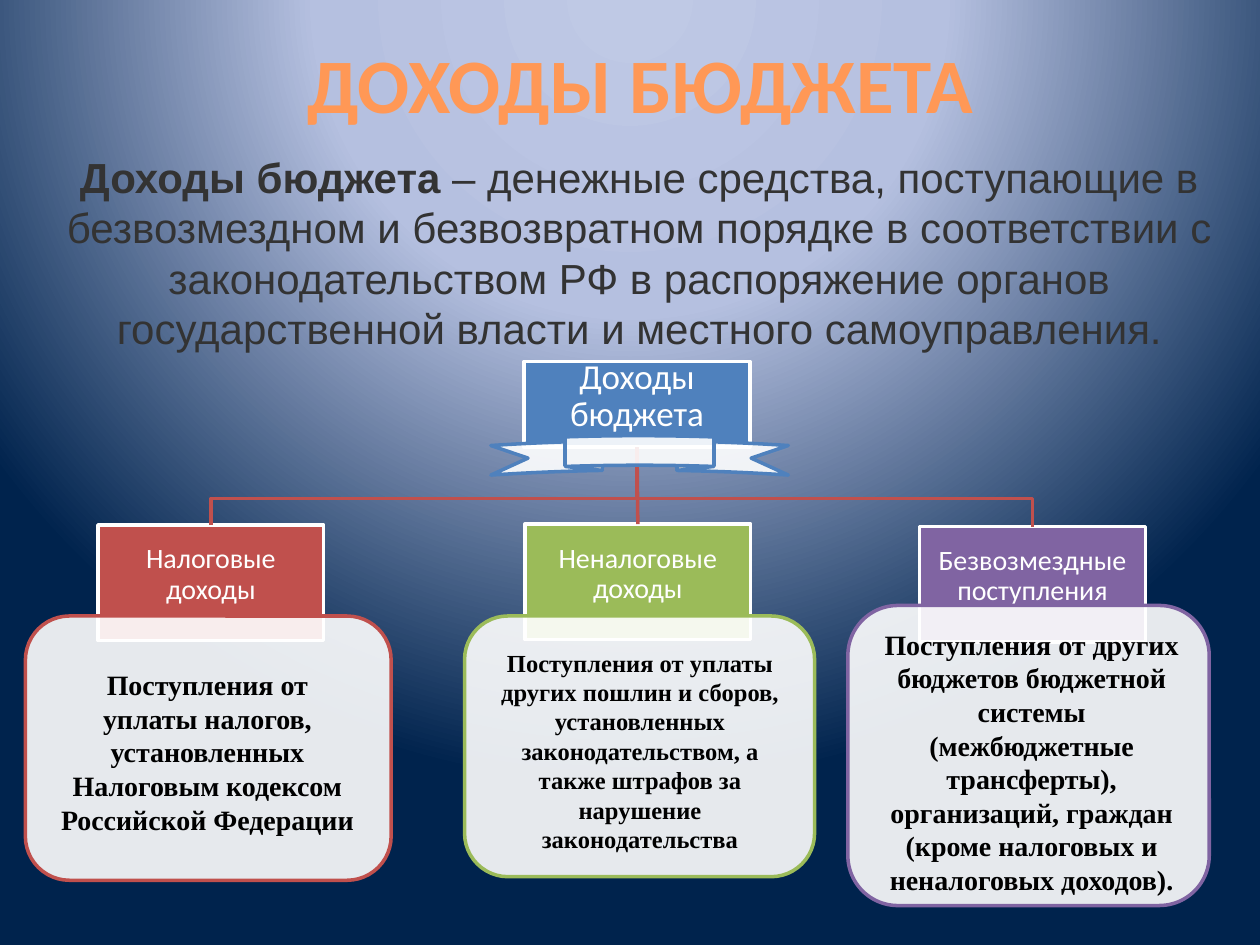
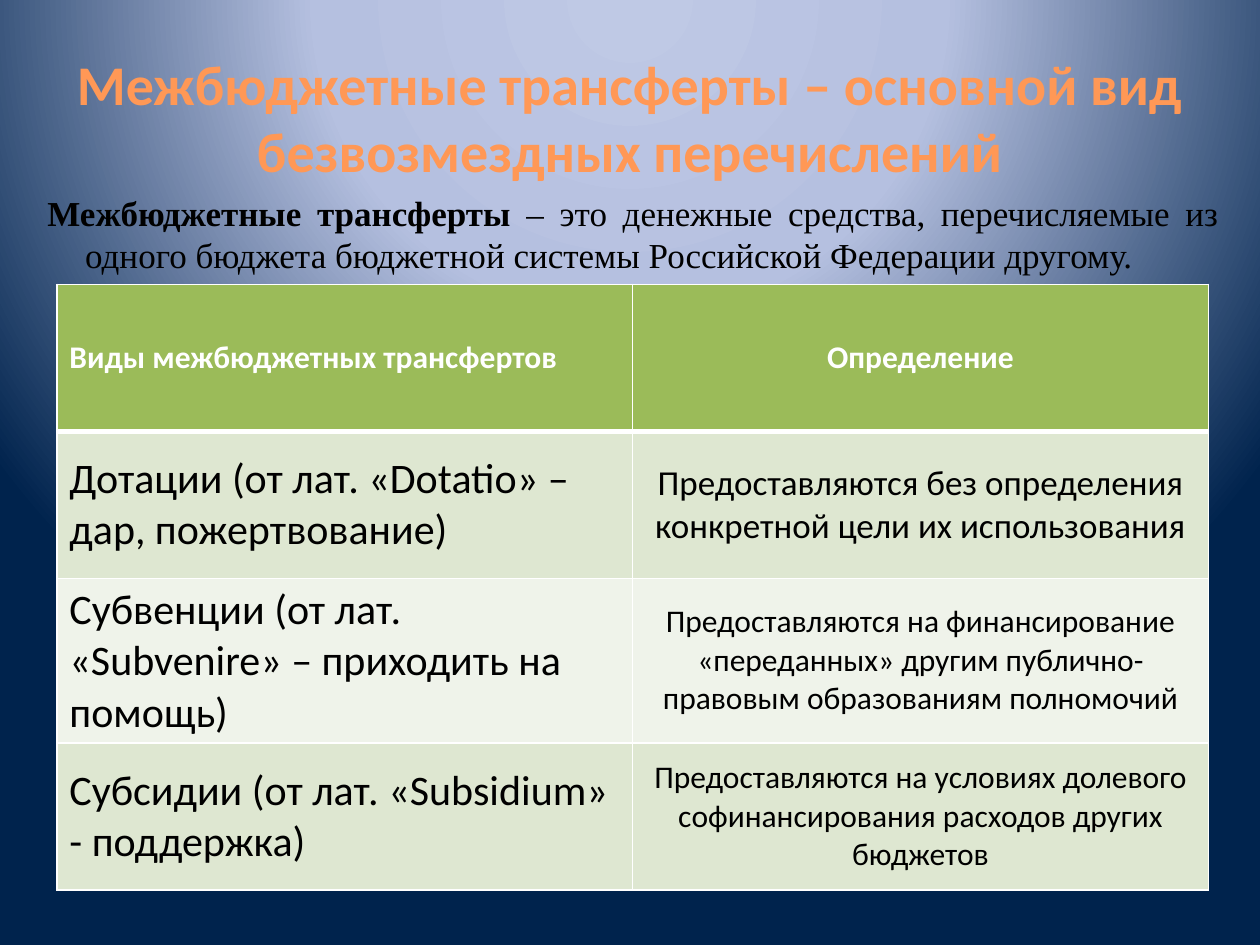
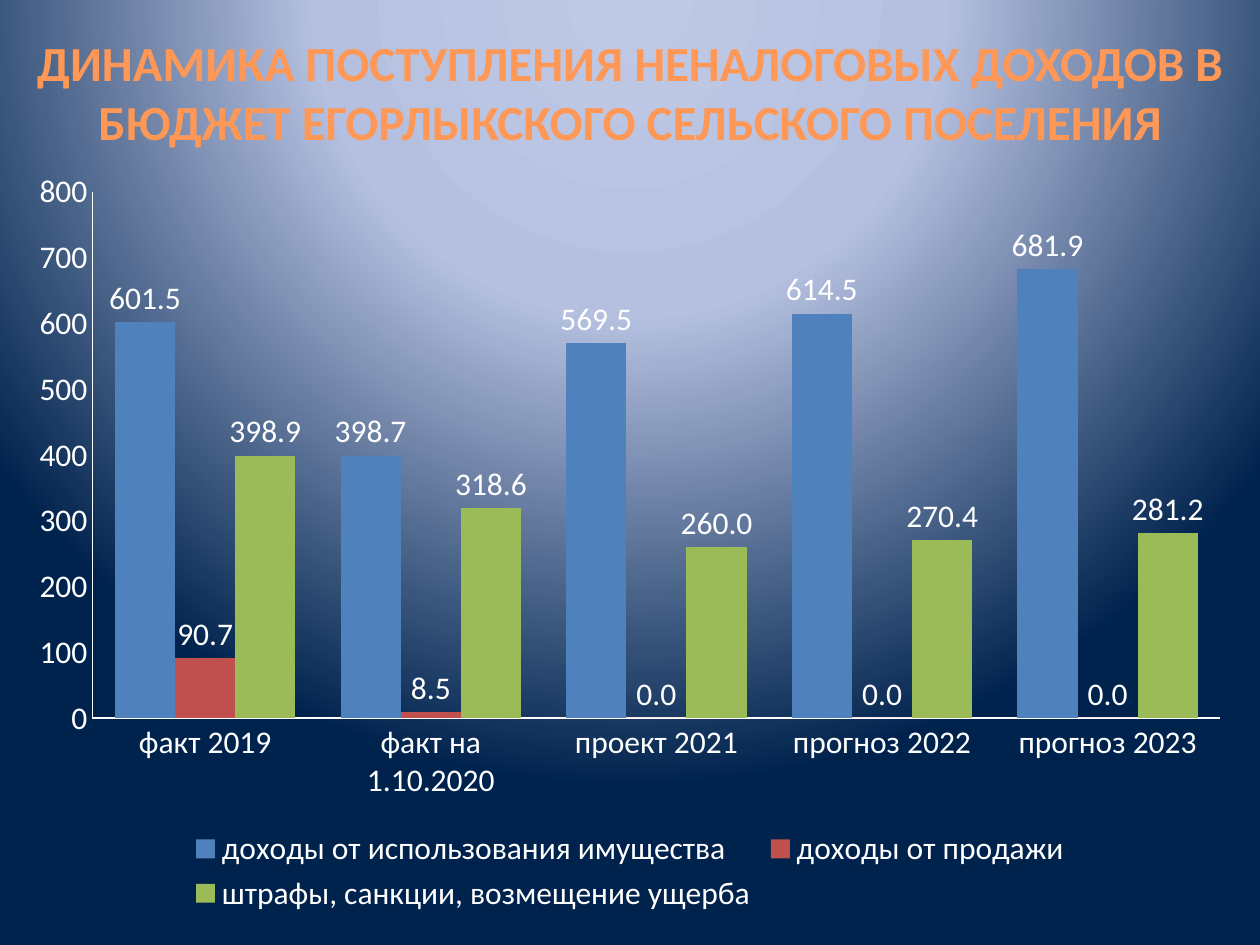
import lxml.etree
import pptx
import pptx.chart.data
import pptx.dml.color
import pptx.enum.chart
import pptx.enum.shapes
import pptx.enum.text
import pptx.oxml.ns
import pptx.util

Pt = pptx.util.Pt
RGB = pptx.dml.color.RGBColor
Kind = pptx.enum.shapes.MSO_SHAPE
Align = pptx.enum.text.PP_ALIGN
Anchor = pptx.enum.text.MSO_ANCHOR
qn = pptx.oxml.ns.qn

WHITE = RGB(0xFF, 0xFF, 0xFF)
BLACK = RGB(0, 0, 0)
GRAY = RGB(0x33, 0x33, 0x33)
ORANGE = RGB(0xFF, 0x98, 0x56)
BLUE = RGB(0x4F, 0x81, 0xBD)
RED = RGB(0xC0, 0x50, 0x4D)
GREEN = RGB(0x9B, 0xBB, 0x59)
PURPLE = RGB(0x80, 0x64, 0xA2)
MINT = RGB(0xDE, 0xE7, 0xD1)
PALE = RGB(0xEF, 0xF3, 0xEA)
GLOW = [(0, RGB(0xBF, 0xC9, 0xE5)), (40, RGB(0xB5, 0xC0, 0xE0)), (100, RGB(0, 0x23, 0x4D))]
SANS, SERIF, PLAIN = "Calibri", "Times New Roman", "Arial"


def node(parent, tag, **attrs):
    return lxml.etree.SubElement(parent, qn(tag), **attrs)


class Deck:
    """Holds the shared style and the slide being built."""

    def __init__(self):
        self.file = pptx.Presentation()
        self.file.slide_width, self.file.slide_height = Pt(720), Pt(540)
        self.glow()

    def glow(self):
        master = self.file.slide_master
        master.background.fill.gradient()
        grad = master.element.find(".//" + qn("a:gradFill"))
        grad.clear()
        stops = node(grad, "a:gsLst")
        for pos, color in GLOW:
            stop = node(stops, "a:gs", pos=str(pos * 1000))
            node(stop, "a:srgbClr", val=str(color))
        way = node(grad, "a:path", path="circle")
        node(way, "a:fillToRect", l="50000", t="-80000", r="50000", b="180000")

    def page(self):
        self.slide = self.file.slides.add_slide(self.file.slide_layouts[6])
        self.shapes = self.slide.shapes

    def font(self, font, size, color, face=SANS, bold=False):
        font.size, font.name, font.bold = Pt(size), face, bold
        font.color.rgb = color

    def text(self, area, words, size, color, face=SANS, bold=False,
             lead="", align=Align.CENTER, anchor=Anchor.TOP):
        box = self.shapes.add_textbox(*map(Pt, area))
        frame = box.text_frame
        frame.word_wrap, frame.vertical_anchor = True, anchor
        para = frame.paragraphs[0]
        para.alignment = align
        self.font(para.font, size, color, face, bold)
        if lead:
            run = para.add_run()
            run.text, run.font.bold = lead, True
        para.add_run().text = words
        return para

    def title(self, area, words, size):
        self.text(area, words, size, ORANGE, bold=True, anchor=Anchor.MIDDLE)

    def shape(self, kind, area, fill, line, alpha=100):
        item = self.shapes.add_shape(kind, *map(Pt, area))
        item.shadow.inherit = False
        item.fill.solid()
        item.fill.fore_color.rgb = fill
        item.line.color.rgb, item.line.width = line, Pt(2)
        if alpha < 100:
            tint = item.element.spPr.find(".//" + qn("a:srgbClr"))
            node(tint, "a:alpha", val=str(alpha * 1000))
        return item

    def box(self, area, words, size, fill):
        item = self.shape(Kind.RECTANGLE, area, fill, WHITE)
        frame = item.text_frame
        frame.word_wrap, frame.vertical_anchor = True, Anchor.MIDDLE
        frame.margin_left = frame.margin_right = frame.margin_top = Pt(0.75)
        frame.margin_bottom = Pt(9.5)
        para = frame.paragraphs[0]
        para.text, para.alignment, para.line_spacing = words, Align.CENTER, 0.9
        self.font(para.font, size, WHITE)
        return item

    def link(self, top, low):
        item = self.shapes.add_connector(pptx.enum.shapes.MSO_CONNECTOR.STRAIGHT, 0, 0, 0, 0)
        item.begin_connect(top, 2)
        item.end_connect(low, 0)
        item.line.color.rgb, item.line.width = RED, Pt(2)
        node(item.element.spPr, "a:effectLst")

    def bend(self, top, low, level):
        start = top.left + top.width // 2
        end = low.left + low.width // 2
        path = self.shapes.build_freeform(start, top.top + top.height)
        path.add_line_segments([(start, Pt(level)), (end, Pt(level)), (end, low.top)], close=False)
        item = path.convert_to_shape()
        item.shadow.inherit = False
        item.fill.background()
        item.line.color.rgb, item.line.width = RED, Pt(2)

    def edge(self, cell, row):
        props = cell._tc.get_or_add_tcPr()
        wide = {"T": 3 if row == 1 else 1, "B": 3 if row == 0 else 1}
        for spot, side in enumerate("LRTB"):
            line = lxml.etree.Element(qn("a:ln" + side), w=str(Pt(wide.get(side, 1))))
            node(node(line, "a:solidFill"), "a:srgbClr", val=str(WHITE))
            props.insert(spot, line)

    def table(self, area, highs, rows, fills, sizes):
        grid = self.shapes.add_table(len(rows), len(rows[0]), *map(Pt, area)).table
        for r, (high, row) in enumerate(zip(highs, rows)):
            grid.rows[r].height = Pt(high)
            for c, words in enumerate(row):
                cell = grid.cell(r, c)
                cell.vertical_anchor = Anchor.MIDDLE
                cell.fill.solid()
                cell.fill.fore_color.rgb = fills[r]
                para = cell.text_frame.paragraphs[0]
                para.text = words
                para.alignment = Align.CENTER if c else Align.LEFT
                self.font(para.font, sizes[r][c], BLACK if r else WHITE, bold=not r)
                self.edge(cell, r)

    def chart(self, area, cats, series):
        data = pptx.chart.data.CategoryChartData(number_format="0.0")
        data.categories = cats
        for name, _, vals in series:
            data.add_series(name, vals)
        kinds = pptx.enum.chart
        chart = self.shapes.add_chart(kinds.XL_CHART_TYPE.COLUMN_CLUSTERED, *map(Pt, area), data).chart
        self.font(chart.font, 18, WHITE)
        chart.has_title = False
        chart.has_legend = True
        chart.legend.position = kinds.XL_LEGEND_POSITION.BOTTOM
        chart.legend.include_in_layout = False
        for axis in (chart.category_axis, chart.value_axis):
            axis.has_major_gridlines = False
            axis.major_tick_mark = axis.minor_tick_mark = kinds.XL_TICK_MARK.NONE
            axis.format.line.color.rgb, axis.format.line.width = WHITE, Pt(0.75)
        scale = chart.value_axis
        scale.minimum_scale, scale.maximum_scale, scale.major_unit = 0, 800, 100
        scale.tick_labels.number_format = "0"
        scale.tick_labels.number_format_is_linked = False
        plot = chart.plots[0]
        plot.gap_width, plot.overlap, plot.vary_by_categories = 75, 0, False
        for bars, (_, color, _) in zip(plot.series, series):
            bars.format.fill.solid()
            bars.format.fill.fore_color.rgb = color
            bars.invert_if_negative = False
            labels = bars.data_labels
            labels.show_value = True
            labels.number_format, labels.number_format_is_linked = "0.0", False
            labels.position = kinds.XL_LABEL_POSITION.OUTSIDE_END


def income(deck):
    deck.page()
    deck.title((42, 2, 648, 90), "ДОХОДЫ БЮДЖЕТА", 44)
    deck.text((25, 83, 680.5, 124),
              " – денежные средства, поступающие в безвозмездном и безвозвратном порядке "
              "в соответствии с законодательством РФ в распоряжение органов "
              "государственной власти и местного самоуправления.",
              24, GRAY, PLAIN, lead="Доходы бюджета")
    root = deck.box((299.5, 206.5, 129, 49), "Доходы бюджета", 20, BLUE)
    kinds = [
        ("Налоговые доходы", RED, (56, 300), (14.5, 352, 209, 151), (25, 378, 187, 104), 16,
         "Поступления от уплаты налогов, установленных Налоговым кодексом "
         "Российской Федерации"),
        ("Неналоговые доходы", GREEN, (300, 299.5), (265.5, 352, 200, 149), (275, 366.5, 181.5, 126), 14,
         "Поступления от уплаты других пошлин и сборов, установленных "
         "законодательством, а также штрафов за нарушение законодательства"),
        ("Безвозмездные поступления", PURPLE, (525.5, 301), (484.5, 346, 206.5, 171.5), (496, 355, 187, 163), 16,
         "Поступления от других бюджетов бюджетной системы (межбюджетные "
         "трансферты), организаций, граждан (кроме налоговых и неналоговых доходов)."),
    ]
    left, mid, right = [deck.box((*spot, 129, 66), name, 16, color)
                        for name, color, spot, *_ in kinds]
    deck.bend(root, left, 285)
    deck.bend(root, right, 285)
    deck.link(root, mid)
    deck.shape(Kind.CURVED_UP_RIBBON, (280.5, 249, 170, 22.5), WHITE, BLUE, 90)
    for _, color, _, card, area, size, words in kinds:
        deck.shape(Kind.FLOWCHART_ALTERNATE_PROCESS, card, WHITE, color, 90)
        deck.text(area, words, size, BLACK, SERIF, True)


def transfers(deck):
    deck.page()
    deck.title((36, 21.5, 648, 90),
               "Межбюджетные трансферты – основной вид безвозмездных перечислений", 32)
    para = deck.text((20, 106, 683.5, 55),
                     "– это денежные средства, перечисляемые из одного бюджета "
                     "бюджетной системы Российской Федерации другому.",
                     20, BLACK, SERIF, lead="Межбюджетные трансферты ", align=Align.JUSTIFY)
    para.space_before = Pt(5.8)
    props = para._p.get_or_add_pPr()
    props.set("marL", str(Pt(21.6)))
    props.set("indent", str(Pt(-21.6)))
    rows = [
        ("Виды межбюджетных трансфертов", "Определение"),
        ("Дотации (от лат. «Dotatio» – дар, пожертвование)",
         "Предоставляются без определения конкретной цели их использования"),
        ("Субвенции (от лат. «Subvenire» – приходить на помощь)",
         "Предоставляются на финансирование «переданных» другим "
         "публично-правовым образованиям полномочий"),
        ("Субсидии (от лат. «Subsidium» - поддержка)",
         "Предоставляются на условиях долевого софинансирования расходов других бюджетов"),
    ]
    deck.table((32.5, 162.5, 658, 346.5), (84, 84, 94, 84), rows,
               (GREEN, MINT, PALE, MINT), ((18, 18), (24, 20), (24, 18), (24, 18)))


def trend(deck):
    deck.page()
    deck.title((8.5, 15, 703, 75),
               "ДИНАМИКА ПОСТУПЛЕНИЯ НЕНАЛОГОВЫХ ДОХОДОВ В БЮДЖЕТ "
               "ЕГОРЛЫКСКОГО СЕЛЬСКОГО ПОСЕЛЕНИЯ", 28)
    cats = ["факт 2019", "факт на 1.10.2020", "проект 2021", "прогноз 2022", "прогноз 2023"]
    deck.chart((8.5, 90, 703, 435), cats, [
        ("доходы от использования имущества", BLUE, (601.5, 398.7, 569.5, 614.5, 681.9)),
        ("доходы от продажи", RED, (90.7, 8.5, 0, 0, 0)),
        ("штрафы, санкции, возмещение ущерба", GREEN, (398.9, 318.6, 260, 270.4, 281.2)),
    ])


def main():
    deck = Deck()
    income(deck)
    transfers(deck)
    trend(deck)
    deck.file.save("out.pptx")


if __name__ == "__main__":
    main()
